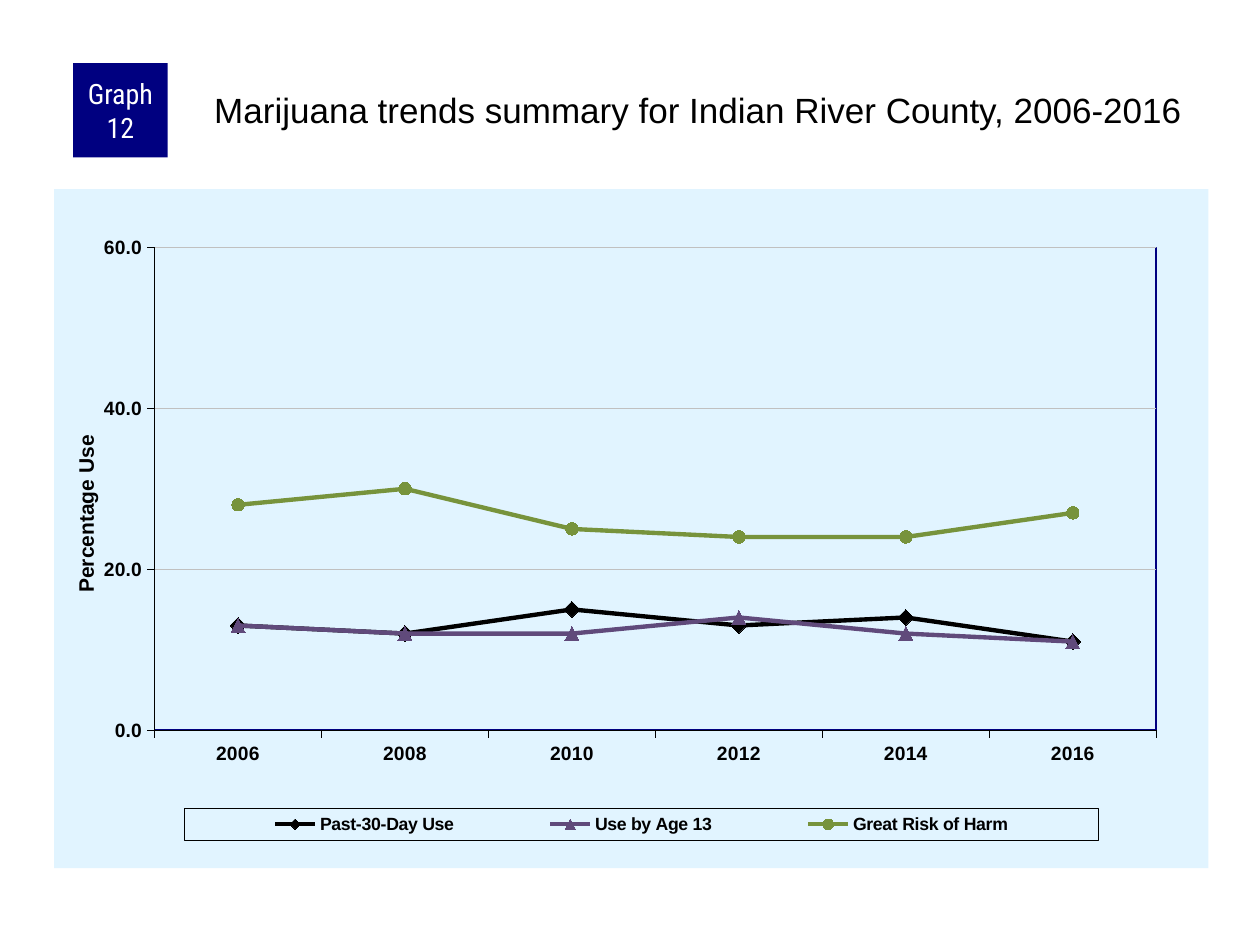
from lxml import etree
from pptx import Presentation
from pptx.chart.data import CategoryChartData
from pptx.dml.color import RGBColor
from pptx.enum.chart import XL_CHART_TYPE as ChartType, XL_LEGEND_POSITION as LegendPosition
from pptx.enum.chart import XL_MARKER_STYLE as Marker, XL_TICK_MARK as Tick
from pptx.enum.shapes import MSO_SHAPE as Shape
from pptx.enum.text import MSO_ANCHOR as Anchor, PP_ALIGN as Align
from pptx.oxml import parse_xml
from pptx.oxml.ns import nsdecls, qn
from pptx.util import Inches, Pt

BLACK = RGBColor(0x00, 0x00, 0x00)
WHITE = RGBColor(0xFF, 0xFF, 0xFF)
NAVY = RGBColor(0x00, 0x00, 0x80)
PALE_BLUE = RGBColor(0xE1, 0xF4, 0xFF)
GRAY = RGBColor(0xC0, 0xC0, 0xC0)
PURPLE = RGBColor(0x60, 0x4A, 0x7B)
GREEN = RGBColor(0x77, 0x93, 0x3C)

BADGE = "Graph 12"
HEADING = "Marijuana trends summary for Indian River County, 2006-2016"
AXIS_TITLE = "Percentage Use"
YEARS = ["2006", "2008", "2010", "2012", "2014", "2016"]
TRENDS = [
    ("Past-30-Day Use", [13, 12, 15, 13, 14, 11], BLACK, Marker.DIAMOND, 9),
    ("Use by Age 13", [13, 12, 12, 14, 12, 11], PURPLE, Marker.TRIANGLE, 8),
    ("Great Risk of Harm", [28, 30, 25, 24, 24, 27], GREEN, Marker.CIRCLE, 7),
]


def style_font(font, size, color, name="Arial", bold=False):
    font.size = Pt(size)
    font.name = name
    font.bold = bold
    font.color.rgb = color


def set_margins(frame, left, top, right, bottom):
    frame.margin_left, frame.margin_top = Inches(left), Inches(top)
    frame.margin_right, frame.margin_bottom = Inches(right), Inches(bottom)


def set_line(line, color, width):
    line.color.rgb = color
    line.width = Pt(width)


def set_layout(element, after, **fractions):
    for old in element.findall(qn("c:layout")):
        element.remove(old)
    layout = etree.Element(qn("c:layout"))
    manual = etree.SubElement(layout, qn("c:manualLayout"))
    if after is None:
        etree.SubElement(manual, qn("c:layoutTarget"), val="inner")
        element.insert(0, layout)
    else:
        element.find(qn(after)).addnext(layout)
    for mode in ("xMode", "yMode"):
        etree.SubElement(manual, qn(f"c:{mode}"), val="edge")
    for side, fraction in fractions.items():
        etree.SubElement(manual, qn(f"c:{side}"), val=str(fraction))


def paint_xml(color):
    return f'<a:solidFill><a:srgbClr val="{color}"/></a:solidFill>' if color else "<a:noFill/>"


def box_xml(fill=None, outline=None, width=0):
    return parse_xml(
        f'<c:spPr {nsdecls("c", "a")}>{paint_xml(fill)}'
        f'<a:ln w="{Pt(width)}">{paint_xml(outline)}</a:ln></c:spPr>'
    )


def add_heading(slide):
    badge = slide.shapes.add_shape(Shape.RECTANGLE, Inches(0.58), Inches(0.5), Inches(0.75), Inches(0.75))
    badge.shadow.inherit = False
    badge.fill.solid()
    badge.fill.fore_color.rgb = NAVY
    badge.line.fill.background()
    frame = badge.text_frame
    frame.word_wrap = True
    frame.vertical_anchor = Anchor.MIDDLE
    set_margins(frame, 0.05, 0, 0.05, 0)
    frame.paragraphs[0].alignment = Align.CENTER
    label = frame.paragraphs[0].add_run()
    label.text = BADGE
    style_font(label.font, 16, WHITE, "Roboto Condensed")

    heading = slide.shapes.add_textbox(Inches(1.67), Inches(0.67), Inches(7.92), Inches(0.83))
    heading.text_frame.word_wrap = True
    set_margins(heading.text_frame, 0.03, 0.03, 0, 0)
    title = heading.text_frame.paragraphs[0].add_run()
    title.text = HEADING
    style_font(title.font, 20, BLACK)


def add_trends(slide):
    data = CategoryChartData(number_format="0.0")
    data.categories = YEARS
    for name, values, *_ in TRENDS:
        data.add_series(name, values)
    chart = slide.shapes.add_chart(
        ChartType.LINE_MARKERS, Inches(0.43), Inches(1.5), Inches(9.16), Inches(5.39), data
    ).chart
    chart.has_title = False
    style_font(chart.font, 8, BLACK)
    chart.plots[0].vary_by_categories = False

    for series, (_, _, color, marker, size) in zip(chart.plots[0].series, TRENDS):
        series.smooth = False
        set_line(series.format.line, color, 2.5)
        series.marker.style = marker
        series.marker.size = size
        series.marker.format.fill.solid()
        series.marker.format.fill.fore_color.rgb = color
        set_line(series.marker.format.line, color, 0.75)

    years, percent = chart.category_axis, chart.value_axis
    for axis in (years, percent):
        axis.major_tick_mark = Tick.OUTSIDE
        axis.minor_tick_mark = Tick.NONE
        style_font(axis.tick_labels.font, 11, BLACK, bold=True)
        set_line(axis.format.line, BLACK, 0.25)
    percent.minimum_scale, percent.maximum_scale, percent.major_unit = 0, 60, 20
    percent.tick_labels.number_format = "0.0"
    percent.tick_labels.number_format_is_linked = False
    percent.has_major_gridlines = True
    set_line(percent.major_gridlines.format.line, GRAY, 0.25)

    caption_frame = percent.axis_title.text_frame
    caption = caption_frame.paragraphs[0].add_run()
    caption.text = AXIS_TITLE
    style_font(caption.font, 12, BLACK, bold=True)
    body = percent.axis_title._element.find(".//" + qn("a:bodyPr"))
    body.set("rot", "-5400000")
    body.set("vert", "horz")
    set_layout(percent.axis_title._element, "c:tx", x=0.013, y=0.357)

    chart.has_legend = True
    chart.legend.position = LegendPosition.RIGHT
    chart.legend.include_in_layout = False
    style_font(chart.legend.font, 10.1, BLACK, bold=True)
    legend = chart.legend._element
    set_layout(legend, "c:legendPos", x=0.113, y=0.912, w=0.792, h=0.047)
    legend.find(qn("c:txPr")).addprevious(box_xml(outline=BLACK, width=0.25))

    chart_space = chart._chartSpace
    plot_area = chart_space.chart.plotArea
    set_layout(plot_area, None, x=0.087, y=0.086, w=0.868, h=0.711)
    plot_area.append(box_xml(outline=NAVY, width=1))
    chart_space.chart.addnext(box_xml(fill=PALE_BLUE))


def main():
    deck = Presentation()
    deck.slide_width, deck.slide_height = Inches(10), Inches(7.5)
    slide = deck.slides.add_slide(deck.slide_layouts[6])
    add_heading(slide)
    add_trends(slide)
    deck.save("out.pptx")


if __name__ == "__main__":
    main()
